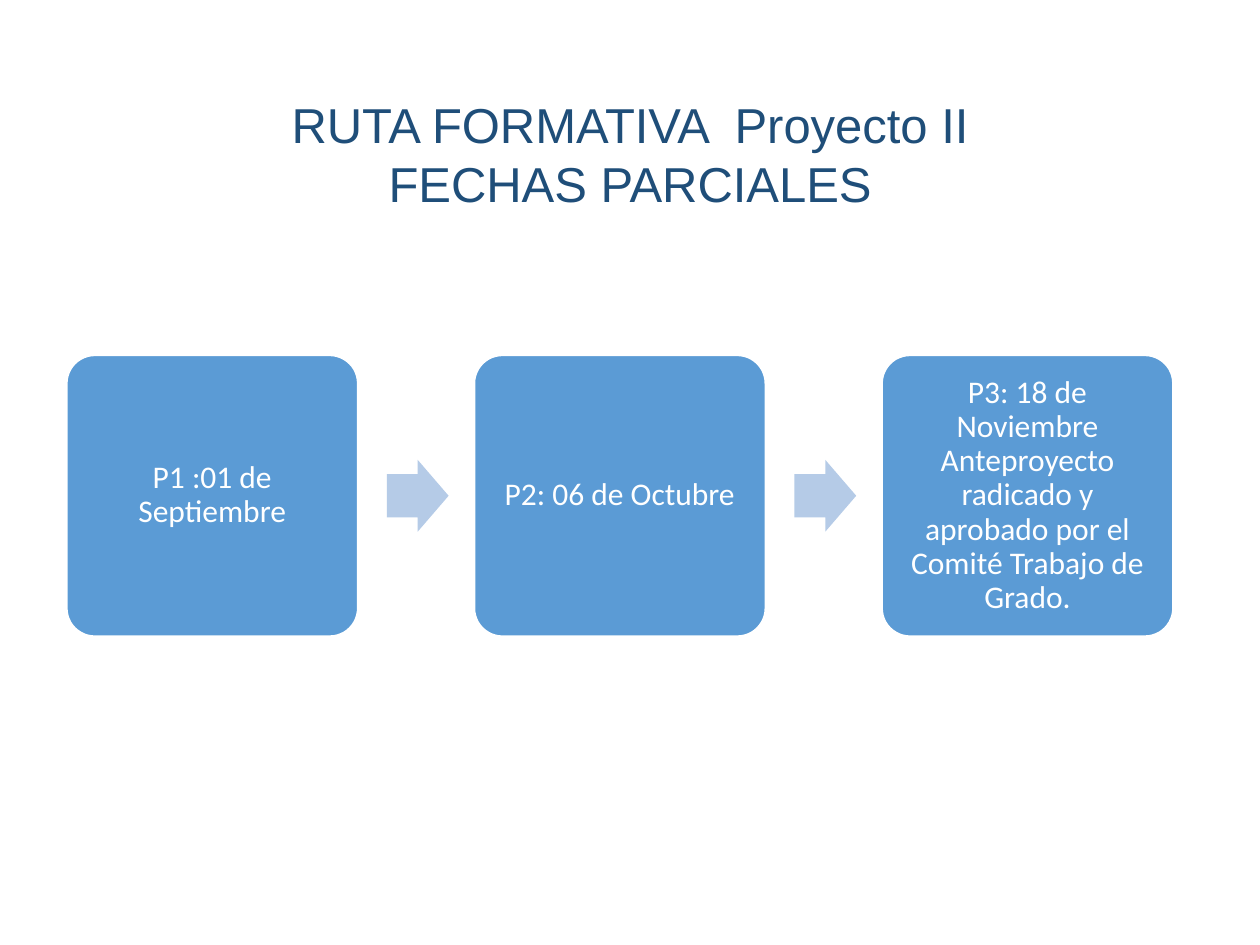
from pptx import Presentation
from pptx.dml.color import RGBColor
from pptx.enum.shapes import MSO_SHAPE as Shape
from pptx.enum.text import MSO_ANCHOR as Anchor, PP_ALIGN as Align
from pptx.util import Inches, Pt

NAVY = RGBColor(0x1F, 0x4E, 0x79)
BLUE = RGBColor(0x5B, 0x9B, 0xD5)
PALE_BLUE = RGBColor(0xB5, 0xCB, 0xE7)
WHITE = RGBColor(0xFF, 0xFF, 0xFF)

TITLE = "RUTA FORMATIVA  Proyecto II FECHAS PARCIALES"
MILESTONES = [
    "P1 :01 de Septiembre",
    "P2: 06 de Octubre",
    "P3: 18 de Noviembre Anteproyecto radicado y aprobado por el "
    "Comité Trabajo de Grado.",
]
CARD_WIDTH = 2.31
ARROW_WIDTH, ARROW_HEIGHT, ARROW_GAP = 0.49, 0.57, 0.23


def write_centred(frame, text, font_name, size, color):
    frame.word_wrap = True
    frame.text = text
    para = frame.paragraphs[0]
    para.alignment = Align.CENTER
    font = para.runs[0].font
    font.name, font.size = font_name, Pt(size)
    font.color.rgb = color
    return para


def add_title(page, left, top, width, height):
    box = page.shapes.add_textbox(Inches(left), Inches(top), Inches(width), Inches(height))
    write_centred(box.text_frame, TITLE, "Arial", 28, NAVY)


def add_flat_shape(page, kind, left, top, width, height, fill, adjustments):
    shape = page.shapes.add_shape(
        kind, Inches(left), Inches(top), Inches(width), Inches(height))
    shape.shadow.inherit = False
    shape.fill.solid()
    shape.fill.fore_color.rgb = fill
    shape.line.fill.background()
    for index, value in enumerate(adjustments):
        shape.adjustments[index] = value
    return shape


def add_card(page, left, top, width, height, text):
    card = add_flat_shape(page, Shape.ROUNDED_RECTANGLE, left, top, width, height, BLUE, [0.1])
    card.line.color.rgb = WHITE
    card.line.width = Pt(1)
    frame = card.text_frame
    frame.margin_left = frame.margin_right = Inches(0.07)
    frame.margin_top = frame.margin_bottom = Inches(0.07)
    frame.vertical_anchor = Anchor.MIDDLE
    para = write_centred(frame, text, "Calibri", 18, WHITE)
    para.line_spacing = 0.9


def add_milestone_flow(page, left, top, width, height):
    """Spread the cards evenly over the box, with an arrow after each but the last."""
    pitch = (width - CARD_WIDTH) / (len(MILESTONES) - 1)
    arrow_top = top + (height - ARROW_HEIGHT) / 2
    for index, text in enumerate(MILESTONES):
        card_left = left + index * pitch
        add_card(page, card_left, top, CARD_WIDTH, height, text)
        if index < len(MILESTONES) - 1:
            add_flat_shape(page, Shape.RIGHT_ARROW, card_left + CARD_WIDTH + ARROW_GAP,
                           arrow_top, ARROW_WIDTH, ARROW_HEIGHT, PALE_BLUE, [0.6, 0.5])


def main():
    deck = Presentation()
    deck.slide_width, deck.slide_height = Inches(10), Inches(7.5)
    page = deck.slides.add_slide(deck.slide_layouts[6])
    add_title(page, 2.14, 0.7, 5.72, 1.04)
    add_milestone_flow(page, 0.53, 2.82, 8.78, 2.23)
    deck.save("out.pptx")


if __name__ == "__main__":
    main()
